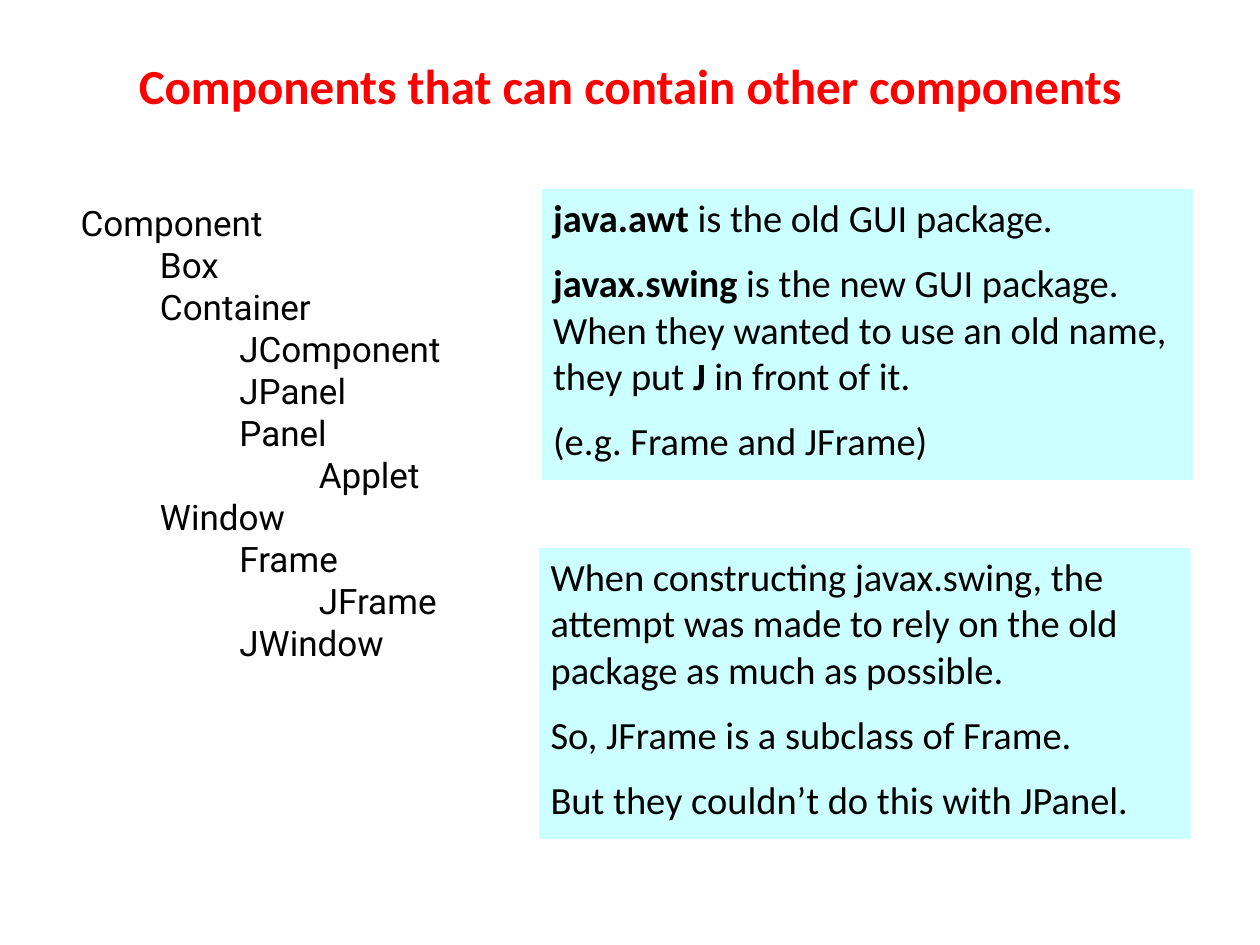
from pptx import Presentation
from pptx.dml.color import RGBColor
from pptx.enum.shapes import MSO_SHAPE
from pptx.enum.text import MSO_ANCHOR, PP_ALIGN
from pptx.util import Inches, Pt

COLORS = {"title": "FF0000", "text": "000000", "panel": "CCFFFF"}
INDENT = 0.63
PANEL_WIDTH, PANEL_HEIGHT = 5.17, 2.31

HIERARCHY = [
    (0, "Component"),
    (1, "Box"),
    (1, "Container"),
    (2, "JComponent"),
    (2, "JPanel"),
    (2, "Panel"),
    (3, "Applet"),
    (1, "Window"),
    (2, "Frame"),
    (3, "JFrame"),
    (2, "JWindow"),
]

PACKAGES = [
    [("java.awt", True), (" is the old GUI package.", False)],
    [
        ("javax.swing", True),
        (" is the new GUI package. When they wanted to use an old name, they put ", False),
        ("J", True),
        (" in front of it.", False),
    ],
    [("(e.g. Frame and JFrame)", False)],
]

REUSE = [
    [("When constructing javax.swing, the attempt was made to rely on "
      "the old package as much as possible.", False)],
    [("So, JFrame is a subclass of Frame.", False)],
    [("But they couldn’t do this with JPanel.", False)],
]


def set_font(paragraph, name, size, color):
    """Give a paragraph its font, size and colour."""
    paragraph.font.name = name
    paragraph.font.size = Pt(size)
    paragraph.font.color.rgb = RGBColor.from_string(COLORS[color])


def prepare_frame(frame):
    """Wrap the text and set narrow margins from the top."""
    frame.word_wrap = True
    frame.vertical_anchor = MSO_ANCHOR.TOP
    frame.margin_left = frame.margin_right = Inches(0.09)
    frame.margin_top = frame.margin_bottom = Inches(0.04)


def paragraphs_for(frame, items):
    """Yield a paragraph with each item, starting with the existing one."""
    for index, item in enumerate(items):
        yield (frame.add_paragraph() if index else frame.paragraphs[0]), item


def place_title(slide, box, text):
    """Place and format the title placeholder."""
    title = slide.shapes.title
    title.left, title.top, title.width, title.height = map(Inches, box)
    title.text_frame.text = text
    title.text_frame.vertical_anchor = MSO_ANCHOR.MIDDLE
    paragraph = title.text_frame.paragraphs[0]
    paragraph.alignment = PP_ALIGN.CENTER
    set_font(paragraph, "Calibri", 28, "title")
    paragraph.font.bold = True


def add_hierarchy(slide, box, entries):
    """Add the class tree, indented by depth."""
    frame = slide.shapes.add_textbox(*map(Inches, box)).text_frame
    prepare_frame(frame)
    for paragraph, (depth, name) in paragraphs_for(frame, entries):
        paragraph.text = name
        set_font(paragraph, "Roboto", 20, "text")
        properties = paragraph._p.get_or_add_pPr()
        properties.set("marL", str(Inches(depth * INDENT)))
        properties.set("indent", "0")


def add_panel(slide, box, notes):
    """Add a filled panel of spaced paragraphs with bold terms."""
    panel = slide.shapes.add_shape(MSO_SHAPE.RECTANGLE, *map(Inches, box))
    panel.shadow.inherit = False
    panel.fill.solid()
    panel.fill.fore_color.rgb = RGBColor.from_string(COLORS["panel"])
    panel.line.fill.background()
    prepare_frame(panel.text_frame)
    for paragraph, pieces in paragraphs_for(panel.text_frame, notes):
        paragraph.alignment = PP_ALIGN.LEFT
        paragraph.space_before = Pt(0 if pieces is notes[0] else 11)
        set_font(paragraph, "Calibri", 22, "text")
        for text, bold in pieces:
            run = paragraph.add_run()
            run.text = text
            run.font.bold = bold


def main():
    """Build and save the slide."""
    presentation = Presentation()
    presentation.slide_width, presentation.slide_height = Inches(10), Inches(7.5)
    slide = presentation.slides.add_slide(presentation.slide_layouts[5])
    add_hierarchy(slide, (0.55, 1.56, 8.93, 3.79), HIERARCHY)
    add_panel(slide, (4.3, 1.5, PANEL_WIDTH, PANEL_HEIGHT), PACKAGES)
    add_panel(slide, (4.28, 4.35, PANEL_WIDTH, PANEL_HEIGHT), REUSE)
    place_title(slide, (0, 0.3, 10, 0.75), "Components that can contain other components")
    presentation.save("out.pptx")


if __name__ == "__main__":
    main()
